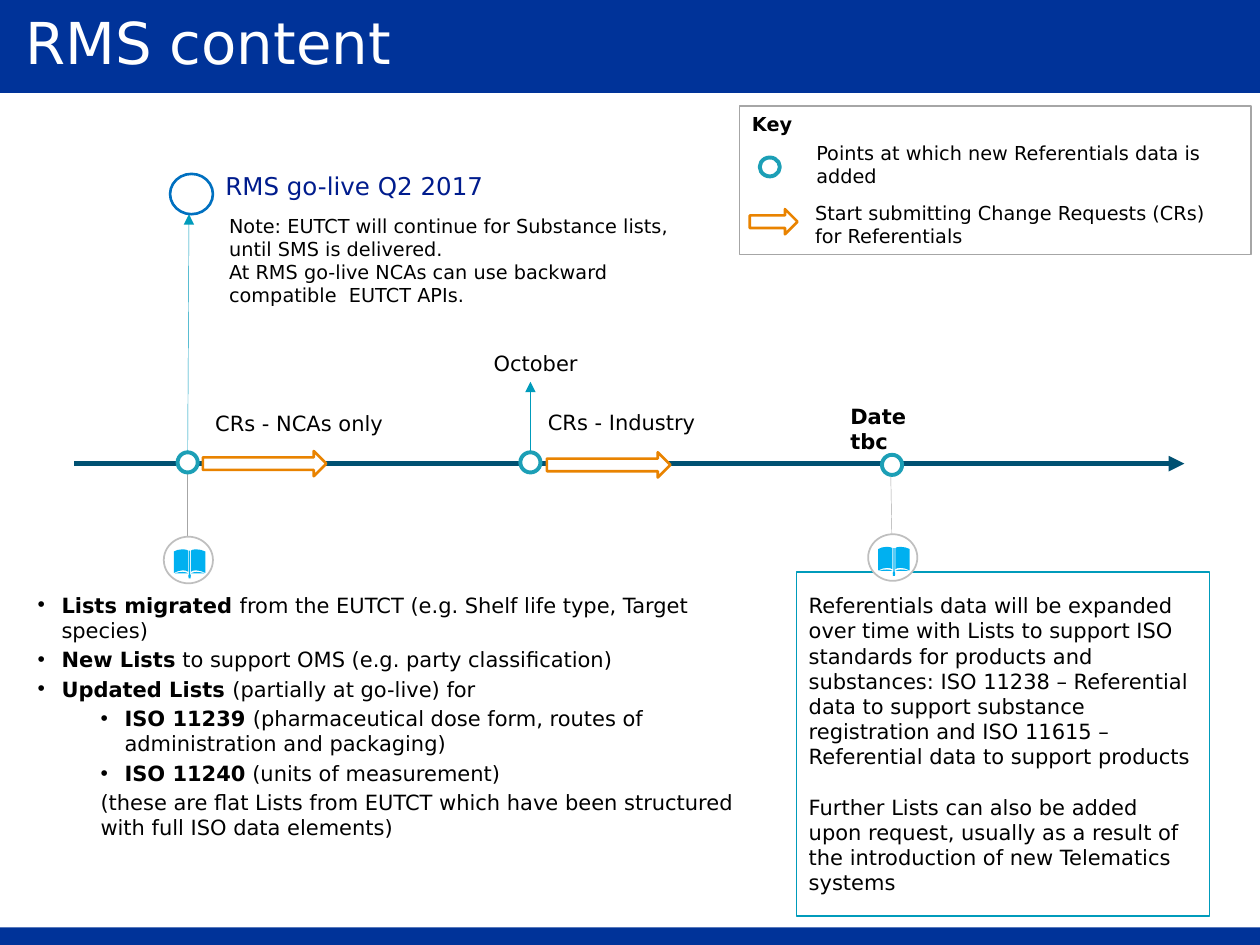
from typing import NamedTuple, Optional

from lxml.etree import SubElement
from pptx import Presentation
from pptx.dml.color import RGBColor
from pptx.enum.shapes import MSO_CONNECTOR, MSO_SHAPE
from pptx.enum.text import MSO_ANCHOR, PP_ALIGN
from pptx.oxml.ns import qn
from pptx.util import Inches, Pt

FONT = "DejaVu Sans"
WHITE = RGBColor(0xFF, 0xFF, 0xFF)
BLACK = RGBColor(0x00, 0x00, 0x00)
BAND_BLUE = RGBColor(0x00, 0x33, 0x99)
HEADING_BLUE = RGBColor(0x00, 0x1C, 0x8D)
GO_LIVE_BLUE = RGBColor(0x00, 0x70, 0xC0)
AXIS_BLUE = RGBColor(0x00, 0x51, 0x72)
TEAL = RGBColor(0x00, 0x9B, 0xBB)
RING_TEAL = RGBColor(0x1C, 0x9F, 0xB6)
BOOK_BLUE = RGBColor(0x00, 0xB0, 0xF0)
ORANGE = RGBColor(0xE9, 0x83, 0x00)
GREY = RGBColor(0xA6, 0xA6, 0xA6)
LIGHT_GREY = RGBColor(0xBF, 0xBF, 0xBF)


class Box(NamedTuple):
    left: float
    top: float
    width: float
    height: float


class Paragraph(NamedTuple):
    text: str
    bold_text: str = ""
    bullet: bool = False
    margin: float = 0
    space_before: float = 0


class Label(NamedTuple):
    text: str
    box: Box
    size: float = 12
    bold: bool = False
    color: RGBColor = BLACK
    wrap: bool = True


class Line(NamedTuple):
    start: tuple[float, float]
    end: tuple[float, float]
    color: RGBColor
    weight: float = 0.25
    arrow: Optional[str] = None  # "headEnd" at start, "tailEnd" at end


# Book outline in thousandths of an inch, one contour per part
BOOK_CONTOURS = [
    [(0, 18), (30, 5), (70, 0), (95, 3), (113, 10), (113, 178), (95, 170), (70, 167), (35, 173), (0, 188)],
    [(250, 18), (215, 5), (175, 0), (150, 3), (137, 10), (137, 178), (150, 170), (175, 167), (215, 173), (250, 188)],
    [(120, 10), (130, 10), (130, 197), (135, 208), (133, 230), (117, 230), (115, 208), (120, 197)],
    [(8, 191), (40, 182), (70, 180), (95, 183), (113, 191)],
    [(137, 191), (155, 183), (180, 180), (210, 182), (242, 191)],
]


def add_shape(slide, kind, box: Box, fill=WHITE, line=None, weight=1.0):
    shape = slide.shapes.add_shape(kind, *map(Inches, box))
    style_shape(shape, fill, line, weight)
    return shape


def style_shape(shape, fill, line=None, weight=1.0) -> None:
    shape.shadow.inherit = False
    shape.fill.solid()
    shape.fill.fore_color.rgb = fill
    if line is None:
        shape.line.fill.background()
    else:
        shape.line.color.rgb = line
        shape.line.width = Pt(weight)


def add_line(slide, line: Line) -> None:
    connector = slide.shapes.add_connector(
        MSO_CONNECTOR.STRAIGHT, *map(Inches, line.start + line.end))
    connector.line.color.rgb = line.color
    connector.line.width = Pt(line.weight)
    if line.arrow:
        SubElement(connector.line._get_or_add_ln(), qn(f"a:{line.arrow}"), type="triangle")
    SubElement(connector._element.spPr, qn("a:effectLst"))


def write_text(shape, paragraphs: list[Paragraph], *, size=12.0, bold=False, color=BLACK,
               anchor=MSO_ANCHOR.TOP, wrap=True, inset=None, line_height=None) -> None:
    frame = shape.text_frame
    frame.word_wrap = wrap
    frame.vertical_anchor = anchor
    if inset is not None:
        frame.margin_left = frame.margin_right = Inches(inset)
        frame.margin_top = frame.margin_bottom = Inches(inset)
    for index, item in enumerate(paragraphs):
        paragraph = frame.paragraphs[0] if index == 0 else frame.add_paragraph()
        paragraph.alignment = PP_ALIGN.LEFT
        if index and item.space_before:
            paragraph.space_before = Pt(item.space_before)
        if line_height:
            paragraph.line_spacing = Pt(line_height)
        properties = paragraph._p.get_or_add_pPr()
        properties.set("marL", str(Inches(item.margin)))
        properties.set("indent", str(Inches(-0.19 if item.bullet else 0)))
        if item.bullet:
            SubElement(properties, qn("a:buFont"), typeface="Arial")
            SubElement(properties, qn("a:buChar"), char="•")
        for text, is_bold in ((item.bold_text, True), (item.text, bold)):
            if text:
                run = paragraph.add_run()
                run.text = text
                run.font.name = FONT
                run.font.size = Pt(size)
                run.font.bold = is_bold
                run.font.color.rgb = color


def add_label(slide, label: Label) -> None:
    text_box = slide.shapes.add_textbox(*map(Inches, label.box))
    write_text(text_box, [Paragraph(label.text)], size=label.size, bold=label.bold,
               color=label.color, wrap=label.wrap)


def add_ring(slide, left: float, top: float, height=0.16) -> None:
    add_shape(slide, MSO_SHAPE.OVAL, Box(left, top, 0.16, height), line=RING_TEAL, weight=2.25)


def add_book(slide, left: float, top: float) -> None:
    add_shape(slide, MSO_SHAPE.OVAL, Box(left, top, 0.39, 0.37), line=LIGHT_GREY)
    first, *others = BOOK_CONTOURS
    builder = slide.shapes.build_freeform(*first[0], scale=Inches(1) / 1000)
    builder.add_line_segments(first[1:])
    for contour in others:
        builder.move_to(*contour[0])
        builder.add_line_segments(contour[1:])
    book = builder.convert_to_shape(Inches(left + 0.08), Inches(top + 0.1))
    style_shape(book, BOOK_BLUE)


def main() -> None:
    presentation = Presentation()
    presentation.slide_width, presentation.slide_height = Inches(10), Inches(7.5)
    slide = presentation.slides.add_slide(presentation.slide_layouts[6])

    # Title and footer bands
    add_shape(slide, MSO_SHAPE.RECTANGLE, Box(0, 0, 10, 0.74), BAND_BLUE)
    add_line(slide, Line((0, 0.74), (10, 0.74), WHITE))
    add_shape(slide, MSO_SHAPE.RECTANGLE, Box(0, 7.36, 10, 0.14), BAND_BLUE)
    title = slide.shapes.add_textbox(*map(Inches, Box(0.2, 0.02, 9.25, 1.04)))
    write_text(title, [Paragraph("RMS content")], size=33, color=WHITE, inset=0, line_height=42.2)

    # Text panels
    expansion = add_shape(slide, MSO_SHAPE.RECTANGLE, Box(6.32, 4.54, 3.28, 2.73), line=TEAL, weight=0.75)
    write_text(expansion, [
        Paragraph("Referentials data will be expanded over time with Lists to support ISO standards for "
                  "products and substances: ISO 11238 – Referential data to support substance registration "
                  "and ISO 11615 – Referential data to support products"),
        Paragraph("Further Lists can also be added upon request, usually as a result of the introduction "
                  "of new Telematics systems", space_before=14.4),
    ], anchor=MSO_ANCHOR.MIDDLE)
    lists = add_shape(slide, MSO_SHAPE.RECTANGLE, Box(0.2, 4.65, 5.8, 2.32))
    write_text(lists, [
        Paragraph("from the EUTCT (e.g. Shelf life type, Target species)", "Lists migrated ", True, 0.19),
        Paragraph(" to support OMS (e.g. party classification)", "New Lists", True, 0.19, 2.4),
        Paragraph("(partially at go-live) for", "Updated Lists ", True, 0.19, 2.4),
        Paragraph("(pharmaceutical dose form, routes of administration and packaging)",
                  "ISO 11239 ", True, 0.69, 2.4),
        Paragraph(" (units of measurement)", "ISO 11240", True, 0.69, 2.4),
        Paragraph("(these are flat Lists from EUTCT which have been structured with full ISO data elements)",
                  margin=0.5, space_before=2.4),
    ])
    note = add_shape(slide, MSO_SHAPE.RECTANGLE, Box(1.72, 1.65, 4.07, 0.84))
    write_text(note, [
        Paragraph("Note: EUTCT will continue for Substance lists, until SMS is delivered."),
        Paragraph("At RMS go-live NCAs can use backward compatible  EUTCT APIs."),
    ], size=11)

    # Key panel
    add_shape(slide, MSO_SHAPE.RECTANGLE, Box(5.87, 0.84, 4.06, 1.18), line=GREY, weight=0.75)
    add_ring(slide, 6.03, 1.25, 0.15)

    # Timeline and its branches
    for line in (
        Line((0.59, 3.68), (9.4, 3.68), AXIS_BLUE, 3, "tailEnd"),
        Line((1.49, 3.75), (1.49, 4.34), GREY),
        Line((7.07, 3.77), (7.08, 4.36), GREY),
        Line((1.5, 1.7), (1.49, 3.59), TEAL, arrow="headEnd"),
        Line((4.21, 3.03), (4.21, 3.59), TEAL, arrow="headEnd"),
    ):
        add_line(slide, line)
    add_shape(slide, MSO_SHAPE.OVAL, Box(1.35, 1.38, 0.34, 0.32), line=GO_LIVE_BLUE, weight=1.5)
    for left, top in ((1.41, 3.59), (4.13, 3.59), (7, 3.61)):
        add_ring(slide, left, top)
    for box in (Box(5.95, 1.66, 0.38, 0.2), Box(1.61, 3.58, 0.98, 0.2), Box(4.34, 3.59, 0.98, 0.2)):
        add_shape(slide, MSO_SHAPE.RIGHT_ARROW, box, line=ORANGE, weight=1.5)
    for left, top in ((1.3, 4.26), (6.89, 4.24)):
        add_book(slide, left, top)

    # Labels
    for label in (
        Label("RMS go-live Q2 2017", Box(1.69, 1.31, 2.47, 0.34), 14, color=HEADING_BLUE),
        Label("Key", Box(5.87, 0.84, 2.3, 0.29), 11, True),
        Label("Points at which new Referentials data is added", Box(6.38, 1.07, 3.42, 0.47), 11),
        Label("Start submitting Change Requests (CRs) for Referentials", Box(6.37, 1.55, 3.52, 0.47), 11),
        Label("Date tbc", Box(6.65, 3.15, 0.95, 0.3), bold=True),
        Label("CRs - NCAs only", Box(1.61, 3.21, 1.64, 0.3), wrap=False),
        Label("CRs - Industry", Box(4.25, 3.2, 1.44, 0.3), wrap=False),
        Label("October", Box(3.82, 2.73, 0.87, 0.3), wrap=False),
    ):
        add_label(slide, label)

    presentation.save("out.pptx")


if __name__ == "__main__":
    main()
